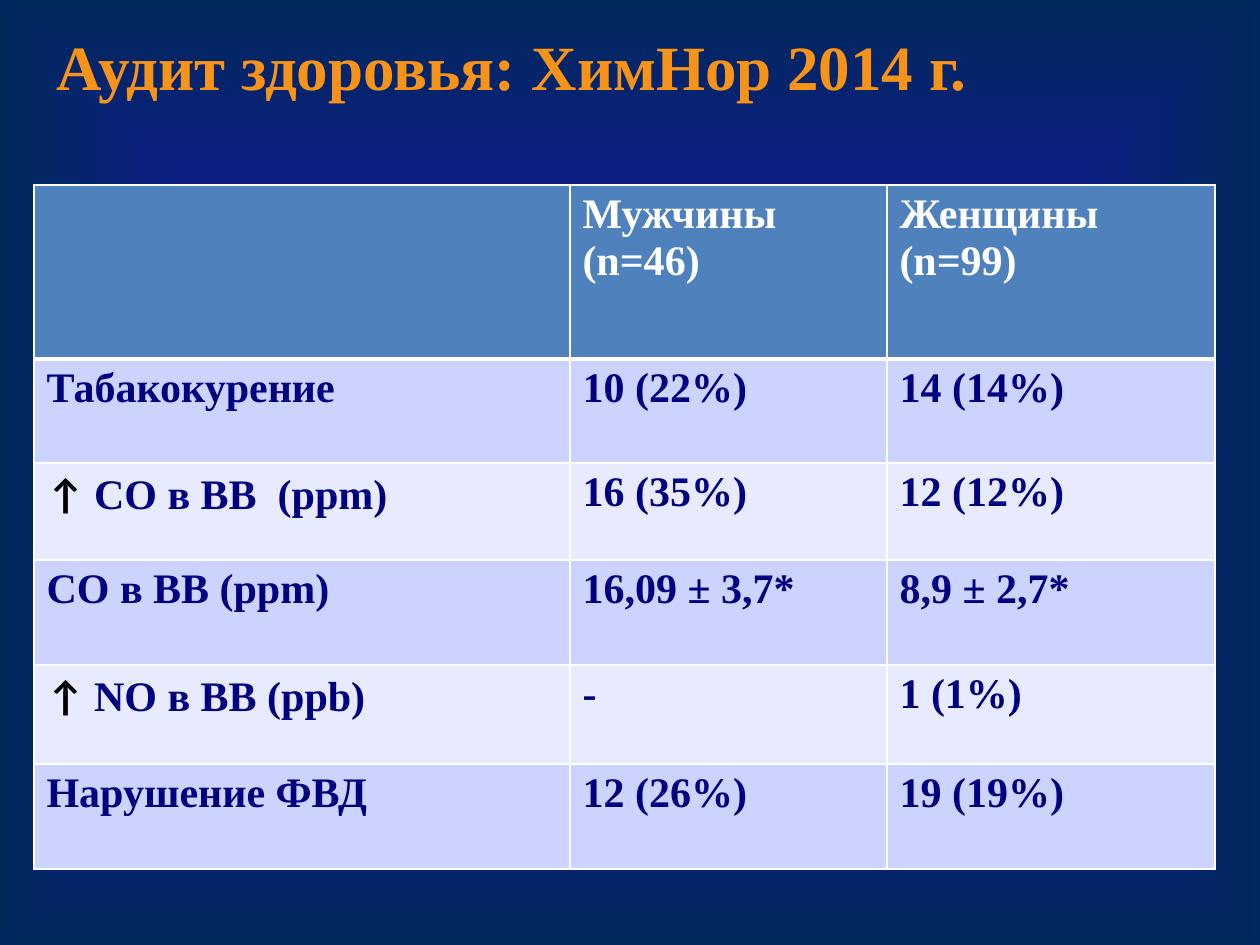
from lxml.etree import SubElement
from pptx import Presentation
from pptx.dml.color import RGBColor
from pptx.enum.text import MSO_ANCHOR
from pptx.oxml.ns import qn
from pptx.util import Emu, Pt

PX = 914400 // 126
SERIF, ARROW_FONT = "Times New Roman", "Calibri"
ORANGE, WHITE, NAVY, BLACK = "F79319", "FFFFFF", "000080", "000000"
HEADER_FILL, BAND_FILLS = "4F81BD", ("CDD3FF", "E8EAFF")
BACKGROUND_STOPS = ((0, "210BC5"), (1, "00295C"))

TITLE = "Аудит здоровья: ХимНор 2014 г."
TITLE_BOX = (44, 26, 1171, 79)
TABLE_AT = (34, 185)
COLUMN_WIDTHS = (536, 317, 328)
ROW_HEIGHTS = (174, 104, 97, 105, 99, 105)
# A line break in a cell starts a new paragraph.
ROWS = (
    ("", "Мужчины (n=46)", "Женщины\n(n=99)"),
    ("Табакокурение", "10 (22%)", "14 (14%)"),
    ("↑ СО в ВВ  (ppm)", "16 (35%)", "12 (12%)"),
    ("СО в ВВ (ppm)", "16,09 ± 3,7*", "8,9 ± 2,7*"),
    ("↑ NO в ВВ (ppb)", "-", "1 (1%)"),
    ("Нарушение ФВД", "12 (26%)", "19 (19%)"),
)


def px(length):
    return Emu(length * PX)


def rgb(color):
    return RGBColor.from_string(color)


def add_run(paragraph, text, size, color, font_name=SERIF):
    run = paragraph.add_run()
    run.text = text
    font = run.font
    font.name, font.size, font.bold = font_name, Pt(size), True
    font.color.rgb = rgb(color)


def set_background(slide):
    """Give the slide a gradient that spreads from its centre."""
    fill = slide.background.fill
    fill.gradient()
    for stop, (position, color) in zip(fill.gradient_stops, BACKGROUND_STOPS):
        stop.position = position
        stop.color.rgb = rgb(color)
    gradient = slide.element.find(".//" + qn("a:gradFill"))
    gradient.remove(gradient.find(qn("a:lin")))
    shape_gradient = SubElement(gradient, qn("a:path"), {"path": "shape"})
    SubElement(shape_gradient, qn("a:fillToRect"), {side: "50000" for side in "ltrb"})


def add_title(slide):
    frame = slide.shapes.add_textbox(*map(px, TITLE_BOX)).text_frame
    frame.word_wrap = True
    frame.vertical_anchor = MSO_ANCHOR.MIDDLE
    add_run(frame.paragraphs[0], TITLE, 36, ORANGE)


def set_cell_look(cell, fill, border_widths):
    """Fill the cell; border widths are in points, by side: L, R, T, B."""
    properties = cell._tc.get_or_add_tcPr()
    for side, width in border_widths.items():
        line = SubElement(properties, qn(f"a:ln{side}"), {"w": str(Pt(width))})
        SubElement(SubElement(line, qn("a:solidFill")), qn("a:srgbClr"), {"val": WHITE})
    cell.fill.solid()
    cell.fill.fore_color.rgb = rgb(fill)


def write_cell(cell, text, color):
    frame = cell.text_frame
    for index, line in enumerate(text.split("\n")):
        paragraph = frame.add_paragraph() if index else frame.paragraphs[0]
        if line.startswith("↑ "):
            add_run(paragraph, "↑ ", 24, BLACK, ARROW_FONT)
            line = line.removeprefix("↑ ")
        if line:
            add_run(paragraph, line, 24, color)


def add_results_table(slide):
    size = (sum(COLUMN_WIDTHS), sum(ROW_HEIGHTS))
    table = slide.shapes.add_table(
        len(ROWS), len(COLUMN_WIDTHS), *map(px, TABLE_AT + size)
    ).table
    for column, width in zip(table.columns, COLUMN_WIDTHS):
        column.width = px(width)
    for row_index, (row, height) in enumerate(zip(table.rows, ROW_HEIGHTS)):
        row.height = px(height)
        is_header = row_index == 0
        fill = HEADER_FILL if is_header else BAND_FILLS[(row_index - 1) % 2]
        borders = {
            "L": 1,
            "R": 1,
            "T": 3 if row_index == 1 else 1,
            "B": 3 if is_header else 1,
        }
        for cell, text in zip(row.cells, ROWS[row_index]):
            set_cell_look(cell, fill, borders)
            write_cell(cell, text, WHITE if is_header else NAVY)


def main():
    presentation = Presentation()
    presentation.slide_width, presentation.slide_height = px(1260), px(945)
    slide = presentation.slides.add_slide(presentation.slide_layouts[6])
    set_background(slide)
    add_title(slide)
    add_results_table(slide)
    presentation.save("out.pptx")


if __name__ == "__main__":
    main()
